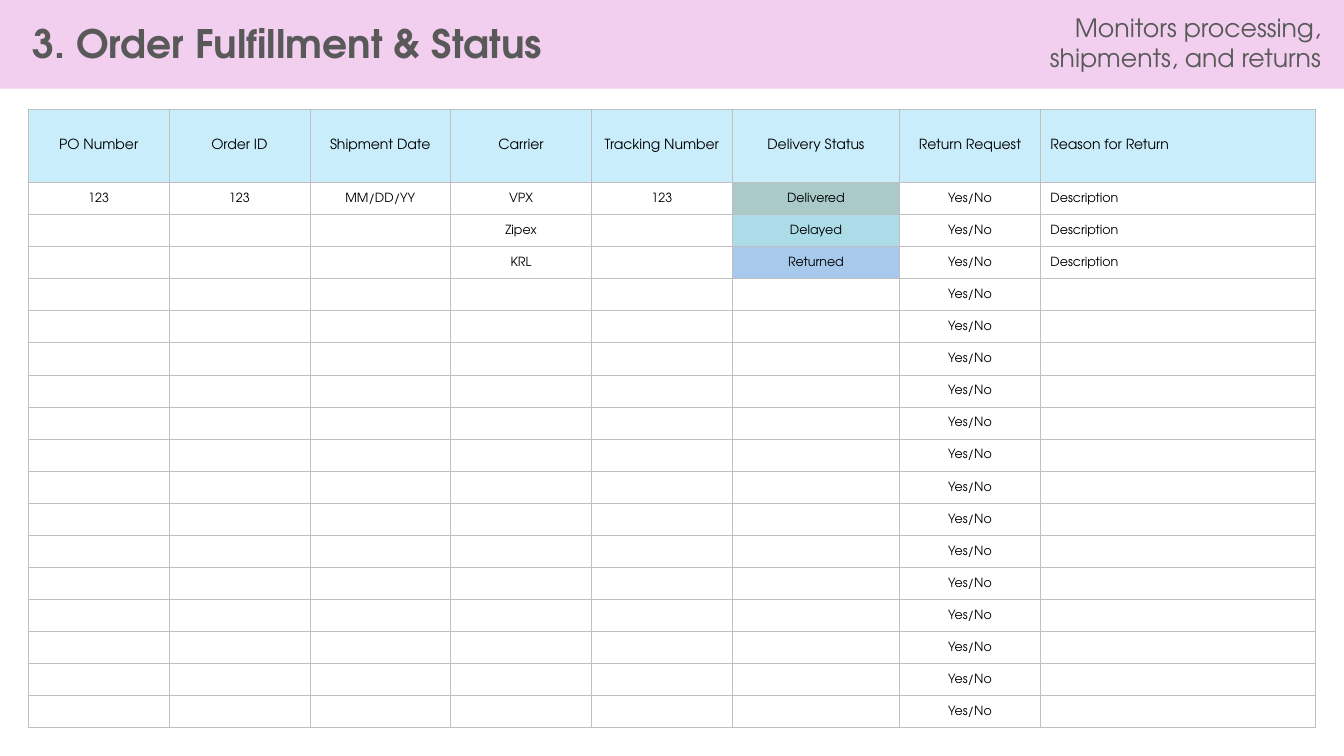
from lxml.etree import SubElement
from pptx import Presentation
from pptx.dml.color import RGBColor
from pptx.enum.shapes import MSO_SHAPE
from pptx.enum.text import MSO_ANCHOR, MSO_AUTO_SIZE, PP_ALIGN
from pptx.oxml import parse_xml
from pptx.oxml.ns import nsdecls, qn
from pptx.util import Inches, Pt

TITLE = "3. Order Fulfillment & Status"
SUBTITLE = "Monitors processing, shipments, and returns"
HEADERS = ["PO Number", "Order ID", "Shipment Date", "Carrier", "Tracking Number",
           "Delivery Status", "Return Request", "Reason for Return"]
ORDERS = [
    ["123", "123", "MM/DD/YY", "VPX", "123", "Delivered", "Yes/No", "Description"],
    ["", "", "", "Zipex", "", "Delayed", "Yes/No", "Description"],
    ["", "", "", "KRL", "", "Returned", "Yes/No", "Description"],
]
BLANK_ORDER = ["", "", "", "", "", "", "Yes/No", ""]
BLANK_COUNT = 14
STATUS_FILLS = {"Delivered": "AACACA", "Delayed": "ABDCE7", "Returned": "A6C9EC"}

FONT = "TeX Gyre Adventor"
PINK, BLUE, WHITE = "F2CFEE", "CAEDFB", "FFFFFF"
GRAY, BLACK, GRID = "595959", "000000", "BFBFBF"

SLIDE_WIDTH, SLIDE_HEIGHT = 13.33, 7.5
TABLE_LEFT, TABLE_TOP, TABLE_WIDTH, TABLE_HEIGHT = 0.28, 1.08, 12.77, 6.14
HEADER_HEIGHT, STATUS_WIDTH, REASON_WIDTH = 0.73, 1.66, 2.73


def paint(color_format, value):
    color_format.rgb = RGBColor.from_string(value)


def fill_solid(target, value):
    target.fill.solid()
    paint(target.fill.fore_color, value)


def write(frame, text, size, color, align, bold=False):
    frame.text = text
    paragraph = frame.paragraphs[0]
    paragraph.alignment = align
    for run in paragraph.runs:
        run.font.name = FONT
        run.font.size = Pt(size)
        run.font.bold = bold
        paint(run.font.color, color)
    if not text:
        # Keeps blank rows from growing to the default text size
        SubElement(paragraph._p, qn("a:endParaRPr"), sz=str(size * 100))


def place_heading(heading, box, text, size, align, bold=False):
    heading.left, heading.top, heading.width, heading.height = map(Inches, box)
    frame = heading.text_frame
    write(frame, text, size, GRAY, align, bold)
    frame.word_wrap = True
    frame.vertical_anchor = MSO_ANCHOR.TOP
    frame.auto_size = MSO_AUTO_SIZE.SHAPE_TO_FIT_TEXT


def outline(cell):
    """Draw the thin grid line on all four sides of a cell."""
    properties = cell._tc.get_or_add_tcPr()
    for position, side in enumerate(("lnL", "lnR", "lnT", "lnB")):
        properties.insert(position, parse_xml(
            f'<a:{side} {nsdecls("a")} w="{Pt(0.5)}"><a:solidFill>'
            f'<a:srgbClr val="{GRID}"/></a:solidFill></a:{side}>'))


def add_order_table(slide):
    rows = [HEADERS] + ORDERS + [BLANK_ORDER] * BLANK_COUNT
    table = slide.shapes.add_table(
        len(rows), len(HEADERS), Inches(TABLE_LEFT), Inches(TABLE_TOP),
        Inches(TABLE_WIDTH), Inches(TABLE_HEIGHT)).table
    table.first_row = table.horz_banding = False

    special_widths = {"Delivery Status": STATUS_WIDTH, "Reason for Return": REASON_WIDTH}
    even_width = ((TABLE_WIDTH - sum(special_widths.values()))
                  / (len(HEADERS) - len(special_widths)))
    for column, header in zip(table.columns, HEADERS):
        column.width = Inches(special_widths.get(header, even_width))

    order_height = (TABLE_HEIGHT - HEADER_HEIGHT) / (len(rows) - 1)
    for row_index, values in enumerate(rows):
        is_header = row_index == 0
        table.rows[row_index].height = Inches(HEADER_HEIGHT if is_header else order_height)
        for cell, header, value in zip(table.rows[row_index].cells, HEADERS, values):
            is_reason = header == "Reason for Return"
            cell.margin_left = Inches(0.1 if is_reason else 0.01)
            cell.margin_top = cell.margin_right = Inches(0.01)
            cell.margin_bottom = 0
            cell.vertical_anchor = MSO_ANCHOR.MIDDLE
            write(cell.text_frame, value, 10 if is_header else 9, BLACK,
                  PP_ALIGN.LEFT if is_reason else PP_ALIGN.CENTER)
            fill_solid(cell, BLUE if is_header else STATUS_FILLS.get(value, WHITE))
            outline(cell)


def main():
    deck = Presentation()
    deck.slide_width, deck.slide_height = Inches(SLIDE_WIDTH), Inches(SLIDE_HEIGHT)
    slide = deck.slides.add_slide(deck.slide_layouts[5])
    title = slide.shapes.title

    band = slide.shapes.add_shape(MSO_SHAPE.RECTANGLE, 0, 0, Inches(SLIDE_WIDTH), Inches(0.88))
    band.shadow.inherit = False
    fill_solid(band, PINK)
    band.line.fill.background()
    title.element.addprevious(band.element)  # the band lies behind the title

    place_heading(title, (0.22, 0.14, 9.59, 0.57), TITLE, 28, PP_ALIGN.LEFT, bold=True)
    subtitle = slide.shapes.add_textbox(0, 0, 0, 0)
    place_heading(subtitle, (9.81, 0.07, 3.39, 0.71), SUBTITLE, 18, PP_ALIGN.RIGHT)

    add_order_table(slide)
    deck.save("out.pptx")


if __name__ == "__main__":
    main()
